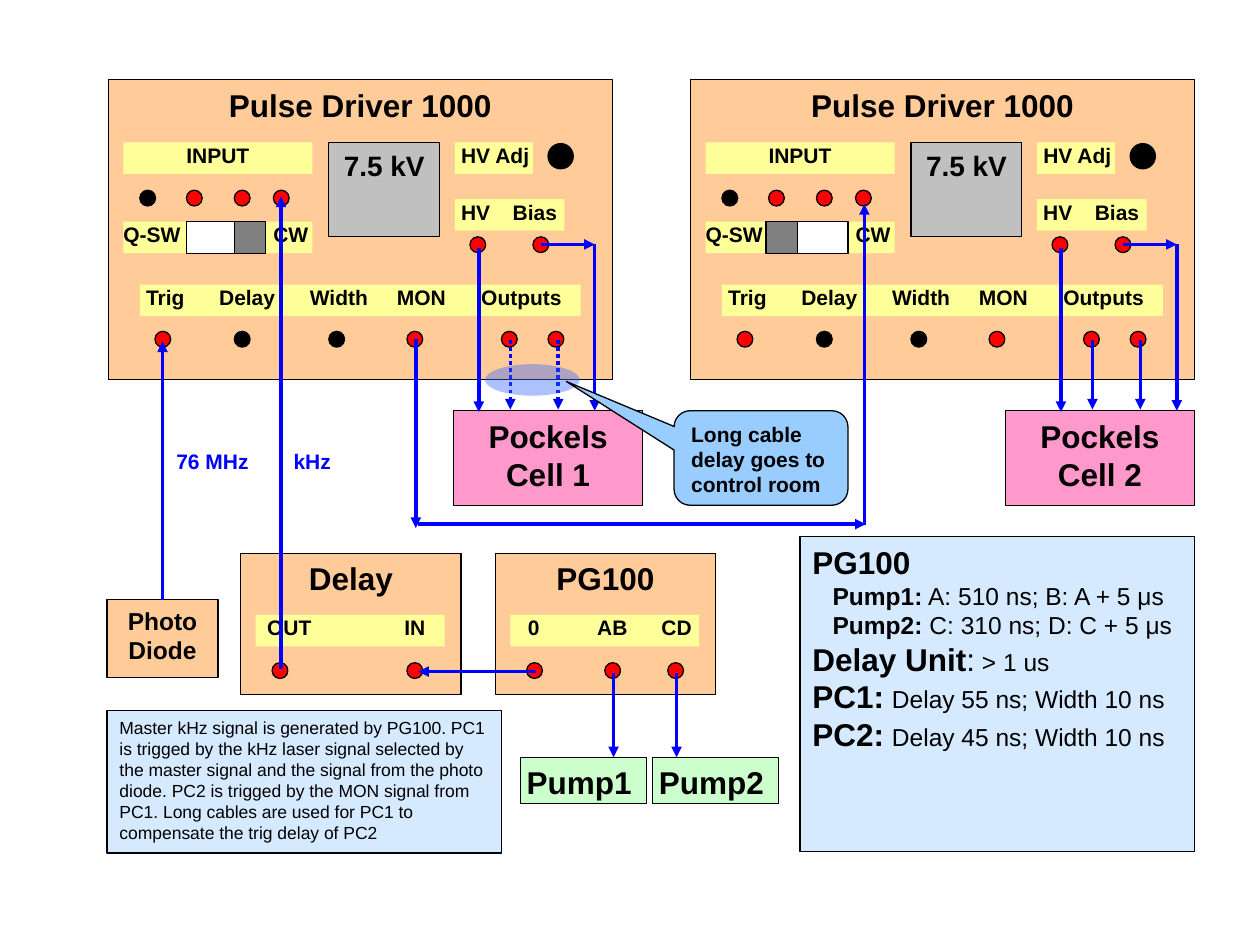
from dataclasses import dataclass

from lxml.etree import SubElement
from pptx import Presentation
from pptx.dml.color import RGBColor
from pptx.enum.dml import MSO_LINE
from pptx.enum.shapes import MSO_CONNECTOR, MSO_SHAPE
from pptx.enum.text import MSO_ANCHOR, PP_ALIGN
from pptx.oxml.ns import qn
from pptx.util import Inches, Pt


@dataclass(frozen=True)
class Theme:
    """Colours, type sizes and line widths of the diagram."""
    font: str = "Arial"
    ink: str = "000000"
    signal: str = "0000FF"
    unit: str = "FFCC99"
    strip: str = "FFFF99"
    live: str = "FF0000"
    display: str = "C0C0C0"
    white: str = "FFFFFF"
    slider: str = "808080"
    cell: str = "FF99CC"
    pump: str = "CCFFCC"
    note: str = "99CCFF"
    cable: str = "3366FF"
    heading: int = 18
    reading: int = 16
    body: int = 14
    label: int = 12
    small: int = 10
    outline: float = 0.75
    wire: float = 2


THEME = Theme()
PORT = 0.125


def format_span(span, size, color=THEME.ink, bold=True):
    """Set the font of one run."""
    span.font.name = THEME.font
    span.font.size = Pt(size)
    span.font.bold = bold
    span.font.color.rgb = RGBColor.from_string(color)


def set_frame(box, left=0.1, top=0.05, right=0.1, bottom=0.05):
    """Anchor wrapped text at the top with the given insets."""
    frame = box.text_frame
    frame.word_wrap = True
    frame.vertical_anchor = MSO_ANCHOR.TOP
    frame.margin_left, frame.margin_top = Inches(left), Inches(top)
    frame.margin_right, frame.margin_bottom = Inches(right), Inches(bottom)
    return frame


def write(box, text, size, align=PP_ALIGN.LEFT, color=THEME.ink, bold=True, **insets):
    """Write one formatted paragraph into a box."""
    frame = set_frame(box, **insets)
    frame.text = text
    para = frame.paragraphs[0]
    para.alignment = align
    format_span(para.runs[0], size, color, bold)
    return para


def add_box(page, area, fill, kind=MSO_SHAPE.RECTANGLE, outlined=True, opacity=None):
    """Add a filled shape at left, top, width, height."""
    box = page.shapes.add_shape(kind, *map(Inches, area))
    box.shadow.inherit = False
    box.fill.solid()
    box.fill.fore_color.rgb = RGBColor.from_string(fill)
    if opacity:
        color = box._element.spPr.find(".//" + qn("a:srgbClr"))
        SubElement(color, qn("a:alpha"), val=str(opacity * 1000))
    if outlined:
        box.line.color.rgb = RGBColor.from_string(THEME.ink)
        box.line.width = Pt(THEME.outline)
    else:
        box.line.fill.background()
    return box


def add_unit(page, area, text, fill=THEME.unit, size=THEME.heading):
    """Add a box with a centred heading."""
    write(add_box(page, area, fill), text, size, PP_ALIGN.CENTER)


def write_labels(box, labels, color=THEME.ink, top=0):
    """Write words on one line, each at its own offset."""
    start = labels[0][0]
    para = write(box, "\t".join(word for _, word in labels), THEME.label,
                 color=color, left=start, top=top, right=0, bottom=0)
    stops = SubElement(para._p.get_or_add_pPr(), qn("a:tabLst"))
    for offset, _ in labels[1:]:
        SubElement(stops, qn("a:tab"), pos=str(Inches(offset - start)), algn="l")


def add_strip(page, left, top, width, labels):
    """Add a yellow strip of port labels."""
    write_labels(add_box(page, (left, top, width, 0.25), THEME.strip, outlined=False), labels)


def add_ports(page, left, top, offsets, dark=()):
    """Add a row of ports, black where the index is dark."""
    for index, offset in enumerate(offsets):
        fill = THEME.ink if index in dark else THEME.live
        add_box(page, (left + offset, top, PORT, PORT), fill, MSO_SHAPE.OVAL)


def add_arrow(page, start, end, dotted=False):
    """Add a signal wire with an arrowhead at its end."""
    wire = page.shapes.add_connector(MSO_CONNECTOR.STRAIGHT, *map(Inches, (*start, *end)))
    wire.line.color.rgb = RGBColor.from_string(THEME.signal)
    wire.line.width = Pt(THEME.wire)
    if dotted:
        wire.line.dash_style = MSO_LINE.ROUND_DOT
    properties = wire._element.spPr
    SubElement(properties.find(qn("a:ln")), qn("a:tailEnd"), type="triangle")
    SubElement(properties, qn("a:effectLst"))


def add_driver(page, left, slider):
    """Add a high-voltage driver panel with its slider position."""
    add_unit(page, (left, 0.63, 4, 2.38), "Pulse Driver 1000")
    write(add_box(page, (left + 0.12, 1.13, 1.5, 0.25), THEME.strip, outlined=False),
          "INPUT", THEME.label, PP_ALIGN.CENTER, left=0, top=0, right=0, bottom=0)
    add_strip(page, left + 0.12, 1.76, 1.5, [(0, "Q-SW"), (1.19, "CW")])
    add_strip(page, left + 0.25, 2.26, 3.5, [
        (0.05, "Trig"), (0.63, "Delay"), (1.35, "Width"), (2.04, "MON"), (2.71, "Outputs")])
    add_strip(page, left + 2.75, 1.58, 0.87, [(0.05, "HV"), (0.46, "Bias")])
    add_strip(page, left + 2.75, 1.13, 0.62, [(0.05, "HV Adj")])
    add_box(page, (left + 0.62, 1.76, 0.63, 0.25), THEME.white)
    add_box(page, (left + slider, 1.76, 0.25, 0.25), THEME.slider)
    add_box(page, (left + 3.49, 1.14, 0.2, 0.2), THEME.ink, MSO_SHAPE.OVAL)
    add_ports(page, left, 1.51, (0.25, 0.62, 1, 1.31), dark=(0,))
    add_ports(page, left, 1.88, (2.87, 3.37))
    add_ports(page, left, 2.63, (0.37, 1, 1.75, 2.37, 3.12, 3.49), dark=(1, 2))
    add_unit(page, (left + 1.75, 1.13, 0.88, 0.75), "7.5 kV", THEME.display, THEME.reading)


def add_cell_wires(page, left, dotted):
    """Wire a driver to the Pockels cell below it."""
    add_arrow(page, (left + 2.94, 1.97), (left + 2.94, 3.27))
    for offset in (3.19, 3.57):
        add_arrow(page, (left + offset, 2.7), (left + offset, 3.25), dotted)
    add_arrow(page, (left + 3.43, 1.94), (left + 3.86, 1.94))
    add_arrow(page, (left + 3.86, 1.94), (left + 3.86, 3.26))


def add_settings(page):
    """Add the panel of timing settings."""
    rows = [
        (0, [("PG100", THEME.heading, True)]),
        (0.16, [("Pump1:", THEME.body, True), (" A: 510 ns; B: A + 5 μs", THEME.body, False)]),
        (0.16, [("Pump2:", THEME.body, True), (" C: 310 ns; D: C + 5 μs", THEME.body, False)]),
        (0, [("Delay Unit", THEME.heading, True), (":", THEME.heading, False),
             (" > 1 us", THEME.body, False)])]
    rows += [(0, [(name, THEME.heading, True), (" ", THEME.reading, False),
                  (f"Delay {delay} ns; Width 10 ns", THEME.body, False)])
             for name, delay in (("PC1:", 55), ("PC2:", 45))]
    frame = set_frame(add_box(page, (6.35, 4.26, 3.13, 2.5), THEME.note, opacity=40))
    for index, (indent, parts) in enumerate(rows):
        para = frame.add_paragraph() if index else frame.paragraphs[0]
        para.alignment = PP_ALIGN.LEFT
        para._p.get_or_add_pPr().set("marL", str(Inches(indent)))
        for text, size, bold in parts:
            span = para.add_run()
            span.text = text
            format_span(span, size, bold=bold)


def add_timing_units(page):
    """Add the generator, delay unit and pumps."""
    add_unit(page, (3.93, 4.39, 1.75, 1.12), "PG100")
    add_strip(page, 4.05, 4.88, 1.5, [(0.14, "0"), (0.69, "AB"), (1.2, "CD")])
    add_ports(page, 3.93, 5.26, (0.25, 0.87, 1.37))
    add_unit(page, (1.91, 4.39, 1.75, 1.12), "Delay")
    add_strip(page, 2.03, 4.88, 1.5, [(0.09, "OUT"), (1.18, "IN")])
    add_ports(page, 1.91, 5.26, (0.25, 1.32))
    add_arrow(page, (4.25, 5.33), (3.32, 5.33))
    for name, left, wire in (("Pump1", 4.13, 4.87), ("Pump2", 5.18, 5.37)):
        add_arrow(page, (wire, 5.34), (wire, 6.01))
        write(add_box(page, (left, 6.01, 1, 0.37), THEME.pump), name, THEME.heading,
              left=0.05, right=0.05)


def add_notes(page):
    """Add the cable callout, the explanation and the frequency labels."""
    add_box(page, (3.85, 2.89, 0.75, 0.25), THEME.cable, MSO_SHAPE.OVAL, False, 40)
    callout = add_box(page, (5.35, 3.26, 1.38, 0.75), THEME.note,
                      MSO_SHAPE.ROUNDED_RECTANGULAR_CALLOUT)
    for index, value in enumerate((-1.12, -0.81, 0.17)):
        callout.adjustments[index] = value
    write(callout, "Long cable delay goes to control room", THEME.label)
    write(add_box(page, (0.85, 5.64, 3.13, 1.13), THEME.note, opacity=40),
          "Master kHz signal is generated by PG100. PC1 is trigged by the kHz laser signal "
          "selected by the master signal and the signal from the photo diode. PC2 is trigged "
          "by the MON signal from PC1. Long cables are used for PC1 to compensate the trig "
          "delay of PC2", THEME.small, bold=False)
    labels = page.shapes.add_textbox(*map(Inches, (1.35, 3.51, 1.5, 0.38)))
    write_labels(labels, [(0.05, "76 MHz"), (0.98, "kHz")], THEME.signal, top=0.05)


def main():
    """Build the timing diagram."""
    deck = Presentation()
    deck.slide_width, deck.slide_height = Inches(10), Inches(7.5)
    page = deck.slides.add_slide(deck.slide_layouts[6])
    add_settings(page)
    add_timing_units(page)
    drivers = ((0.86, 1, 3.6, True), (5.48, 0.6, 7.98, False))
    for number, (left, slider, cell, dotted) in enumerate(drivers, 1):
        add_driver(page, left, slider)
        add_unit(page, (cell, 3.26, 1.5, 0.75), f"Pockels Cell {number}", THEME.cell)
        add_cell_wires(page, left, dotted)
    add_unit(page, (0.85, 4.76, 0.88, 0.62), "Photo Diode", size=THEME.body)
    for start, end in (((1.29, 4.76), (1.29, 2.71)), ((2.23, 5.31), (2.23, 1.56)),
                       ((3.3, 2.69), (3.3, 4.19)), ((3.32, 4.16), (6.87, 4.16)),
                       ((6.86, 4.17), (6.86, 1.62))):
        add_arrow(page, start, end)
    add_notes(page)
    deck.save("out.pptx")


if __name__ == "__main__":
    main()
